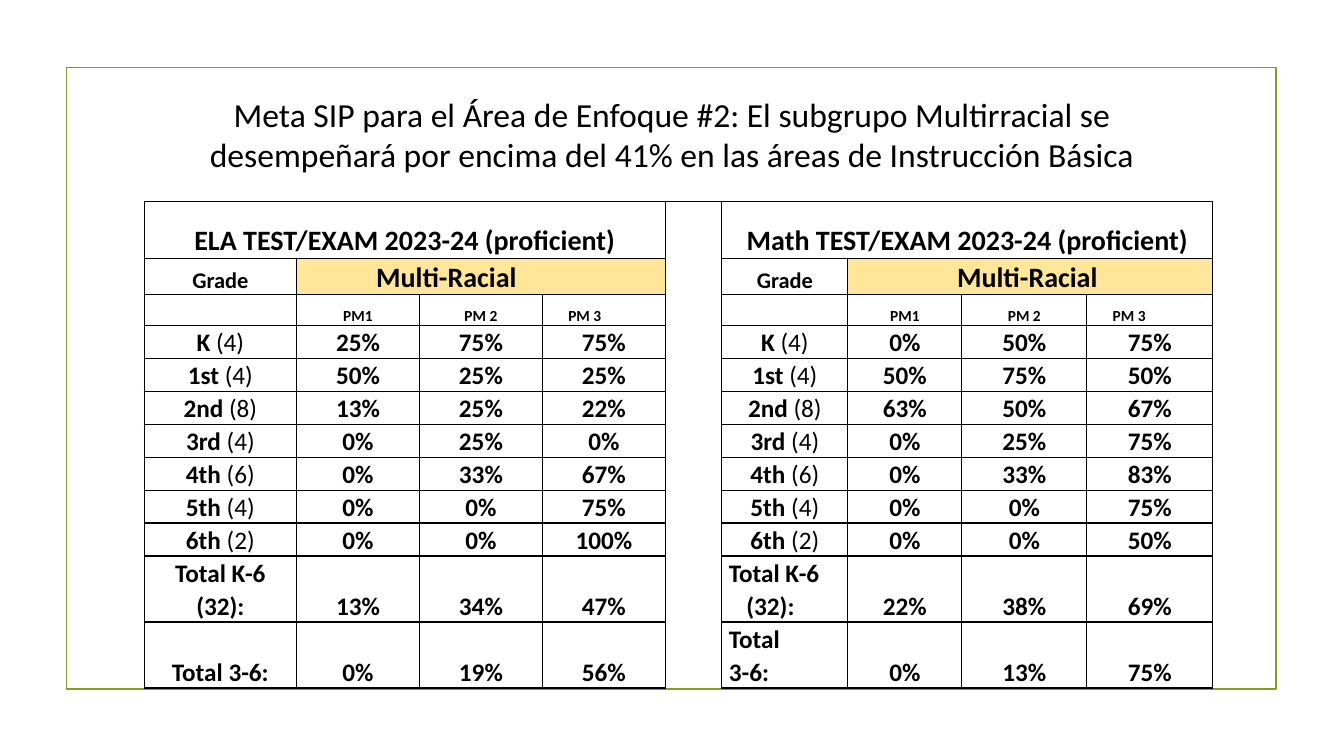
from lxml import etree
from pptx import Presentation
from pptx import util as u
from pptx.dml.color import RGBColor
from pptx.enum import shapes, text
from pptx.oxml.ns import qn

BLACK = RGBColor(0x00, 0x00, 0x00)
GREEN = RGBColor(0x83, 0x99, 0x2A)
GOLD = RGBColor(0xFF, 0xE6, 0x99)
MID, LEFT = text.PP_ALIGN.CENTER, text.PP_ALIGN.LEFT
PLAIN = "{2D5ABB26-0587-4C30-8999-92F81FD0307C}"

COLS = [11.33, 9.15, 9.15, 9.15, 4.2, 9.38, 8.48, 9.3, 9.38]
ROWS = [7.47, 4.8, 4.05] + [4.36] * 7 + [8.73] * 2
GAP = 4
GRADES = [
    ("K", 4, "25% 75% 75%", "0% 50% 75%"),
    ("1st", 4, "50% 25% 25%", "50% 75% 50%"),
    ("2nd", 8, "13% 25% 22%", "63% 50% 67%"),
    ("3rd", 4, "0% 25% 0%", "0% 25% 75%"),
    ("4th", 6, "0% 33% 67%", "0% 33% 83%"),
    ("5th", 4, "0% 0% 75%", "0% 0% 75%"),
    ("6th", 2, "0% 0% 100%", "0% 0% 50%"),
]
TOTALS = ["13% 34% 47%", "0% 19% 56%"], ["22% 38% 69%", "0% 13% 75%"]


class Deck:
    """Draws on one slide, with lengths in percent of its width and height."""

    def __init__(self):
        self.prs = Presentation()
        self.prs.slide_width, self.prs.slide_height = u.Inches(13.33), u.Inches(7.5)
        self.slide = self.prs.slides.add_slide(self.prs.slide_layouts[6])

    def wide(self, part):
        return u.Emu(round(self.prs.slide_width * part / 100))

    def high(self, part):
        return u.Emu(round(self.prs.slide_height * part / 100))

    def box(self, x, y, w, h):
        return self.wide(x), self.high(y), self.wide(w), self.high(h)

    def run(self, para, words, size, bold=False):
        run = para.add_run()
        run.text = words
        font = run.font
        font.name, font.size, font.bold = "Calibri", u.Pt(size), bold
        font.color.rgb = BLACK

    def frame(self, *area):
        rect = self.slide.shapes.add_shape(shapes.MSO_SHAPE.RECTANGLE, *self.box(*area))
        rect.shadow.inherit = False
        rect.fill.background()
        rect.line.color.rgb, rect.line.width = GREEN, u.Pt(1.25)

    def title(self, words, *area):
        frame = self.slide.shapes.add_textbox(*self.box(*area)).text_frame
        frame.word_wrap = True
        para = frame.paragraphs[0]
        para.alignment = MID
        self.run(para, words, 24)

    def edge(self, cell, sides):
        props = cell._tc.get_or_add_tcPr()
        for spot, side in enumerate(sides):
            line = etree.Element(qn("a:ln" + side), w=str(u.Pt(1)))
            fill = etree.SubElement(line, qn("a:solidFill"))
            etree.SubElement(fill, qn("a:srgbClr"), val=str(BLACK))
            props.insert(spot, line)

    def grid(self, x, y, cols, rows):
        area = self.box(x, y, sum(cols), sum(rows))
        table = self.slide.shapes.add_table(len(rows), len(cols), *area).table
        table.first_row = table.horz_banding = False
        table._tbl.tblPr.find(qn("a:tableStyleId")).text = PLAIN
        for col, part in zip(table.columns, cols):
            col.width = self.wide(part)
        for row, part in zip(table.rows, rows):
            row.height = self.high(part)
        for r in range(len(rows)):
            for c in range(len(cols)):
                cell = table.cell(r, c)
                cell.fill.background()
                cell.margin_left = cell.margin_right = u.Inches(0.07)
                cell.margin_top = cell.margin_bottom = 0
                cell.vertical_anchor = text.MSO_ANCHOR.BOTTOM
                self.edge(cell, "LRTB" if c != GAP else "LRT" if r == 0 else "LR")
        self.table = table

    def cell(self, r, c, *lines, size=18, tail="", align=MID, inset=0, hang=0, span=1):
        cell = self.table.cell(r, c)
        if span > 1:
            cell.merge(self.table.cell(r, c + span - 1))
        para = cell.text_frame.paragraphs[0]
        para.alignment, para.line_spacing = align, 1.07
        if inset:
            props = para._p.get_or_add_pPr()
            props.set("marL", str(self.wide(inset)))
            props.set("indent", str(-self.wide(hang)))
        for n, line in enumerate(lines):
            if n:
                para.add_line_break()
            self.run(para, line, size, True)
        if tail:
            self.run(para, tail, size)
        return cell

    def blank(self, r, c):
        para = self.table.cell(r, c).text_frame.paragraphs[0]
        etree.SubElement(para._p, qn("a:endParaRPr"), sz="1100")

    def half(self, c, name, inset, side):
        self.cell(0, c, name + " TEST/EXAM 2023-24 (proficient)", size=20, span=4)
        self.cell(1, c, "Grade", size=16)
        band = self.cell(1, c + 1, "Multi-Racial", size=20, align=LEFT, inset=inset, span=3)
        band.fill.solid()
        band.fill.fore_color.rgb = GOLD
        self.blank(2, c)
        self.cell(2, c + 1, "PM1", size=11)
        self.cell(2, c + 2, "PM 2", size=11)
        self.cell(2, c + 3, "PM 3", size=11, align=LEFT, inset=1.4)
        for r, grade in enumerate(GRADES, 3):
            self.cell(r, c, grade[0] + " ", tail=f"({grade[1]})")
        scores = [grade[2 + side] for grade in GRADES] + TOTALS[side]
        for r, line in enumerate(scores, 3):
            for k, score in enumerate(line.split(), c + 1):
                self.cell(r, k, score)


def main():
    deck = Deck()
    deck.frame(4.95, 8.93, 90, 82.27)
    deck.grid(10.73, 26.67, COLS, ROWS)
    deck.half(0, "ELA", 5.4, 0)
    deck.half(GAP + 1, "Math", 7.6, 1)
    deck.cell(10, 0, "Total K-6", "(32):")
    deck.cell(11, 0, "Total 3-6:")
    deck.cell(10, GAP + 1, "Total K-6", "(32):", align=LEFT, inset=1.3, hang=1.3)
    deck.cell(11, GAP + 1, "Total", "3-6:", align=LEFT)
    for r in range(len(ROWS)):
        deck.blank(r, GAP)
    deck.title(
        "Meta SIP para el Área de Enfoque #2: El subgrupo Multirracial se "
        "desempeñará por encima del 41% en las áreas de Instrucción Básica",
        10.73, 11.73, 78.54, 12.13)
    deck.prs.save("out.pptx")


if __name__ == "__main__":
    main()
